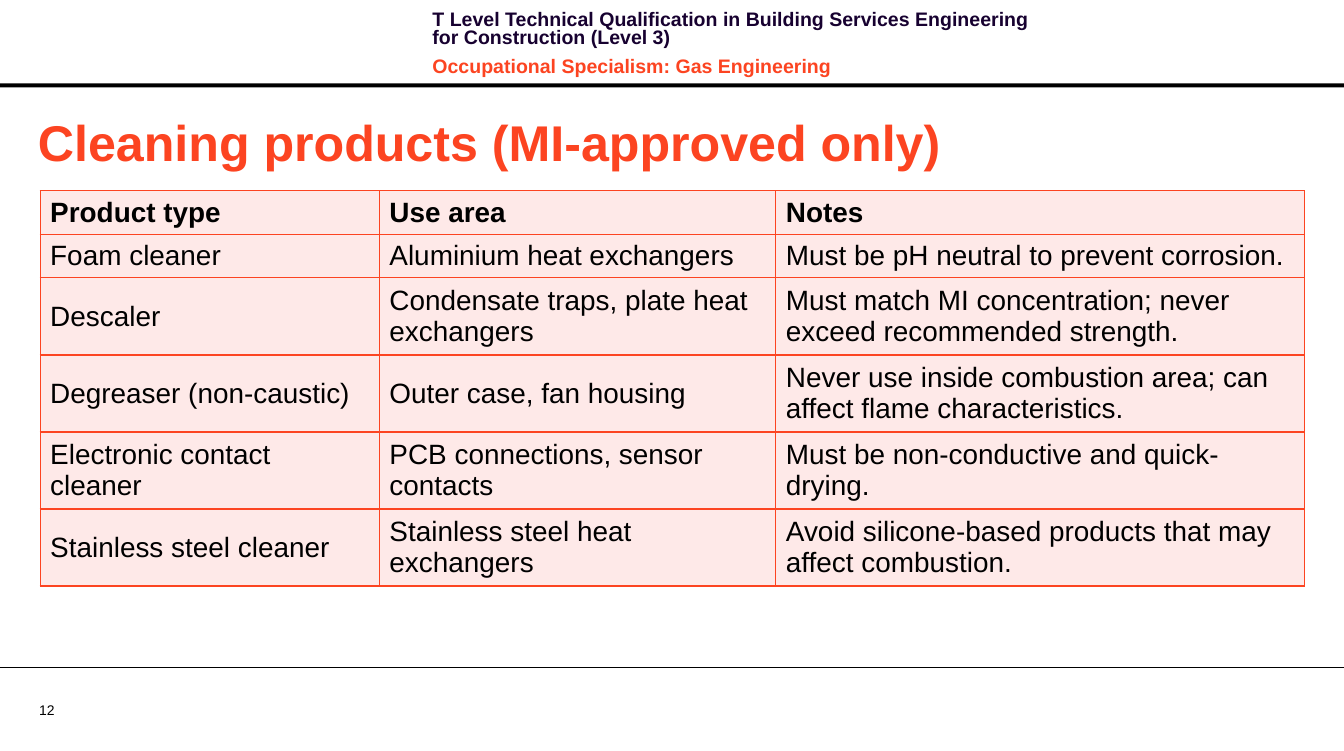
from lxml import etree
from pptx import Presentation
from pptx import util as u
from pptx.dml.color import RGBColor
from pptx.enum import shapes, text
from pptx.oxml import ns

WIDTH, HEIGHT = u.Inches(13.39), u.Inches(7.48)
FONT = "Arial"
COLOURS = {"black": "000000", "navy": "170130", "orange": "FC4421", "blush": "FEE9E8"}
COLUMN_SHARES = (25.24, 29.5, 39.36)
ONE_LINE, TWO_LINES = 5.48, 9.63
ROW_SHARES = (ONE_LINE,) * 2 + (TWO_LINES,) * 4
PRODUCTS = (
    ("Product type", "Use area", "Notes"),
    ("Foam cleaner", "Aluminium heat exchangers", "Must be pH neutral to prevent corrosion."),
    ("Descaler", "Condensate traps, plate heat exchangers",
     "Must match MI concentration; never exceed recommended strength."),
    ("Degreaser (non-caustic)", "Outer case, fan housing",
     "Never use inside combustion area; can affect flame characteristics."),
    ("Electronic contact cleaner", "PCB connections, sensor contacts",
     "Must be non-conductive and quick-drying."),
    ("Stainless steel cleaner", "Stainless steel heat exchangers",
     "Avoid silicone-based products that may affect combustion."),
)


def across(percent):
    return round(WIDTH * percent / 100)


def down(percent):
    return round(HEIGHT * percent / 100)


def area(left, top, width, height):
    return across(left), down(top), across(width), down(height)


def colour(name):
    return RGBColor.from_string(COLOURS[name])


def style(para, size, ink, bold=False):
    for span in para.runs:
        font = span.font
        font.name, font.size, font.bold = FONT, u.Pt(size), bold
        font.color.rgb = colour(ink)


def add_text(page, place, lines, size, inks, bold=False, anchor=text.MSO_ANCHOR.MIDDLE):
    frame = page.shapes.add_textbox(*place).text_frame
    frame.word_wrap = True
    frame.vertical_anchor = anchor
    frame.text = "\n".join(lines)
    for para, ink in zip(frame.paragraphs, inks):
        style(para, size, ink, bold)
    return frame


def add_header(page):
    lines = ("T Level Technical Qualification in Building Services Engineering "
             "for Construction (Level 3)", "Occupational Specialism: Gas Engineering")
    frame = add_text(page, area(31.44, 0.94, 47.57, 8.56), lines, 14,
                     ("navy", "orange"), True, text.MSO_ANCHOR.TOP)
    for para in frame.paragraphs:
        para.line_spacing = u.Pt(13.1)
        para.space_after = u.Pt(4)
    frame.paragraphs[1].space_before = u.Pt(4)


def add_bar(page):
    bar = page.shapes.add_shape(shapes.MSO_SHAPE.RECTANGLE, *area(0, 11.1, 100, 0.53))
    bar.shadow.inherit = False
    bar.fill.solid()
    bar.fill.fore_color.rgb = colour("black")
    bar.line.fill.background()


def add_rule(page, top):
    rule = page.shapes.add_connector(shapes.MSO_CONNECTOR.STRAIGHT, 0, down(top), WIDTH, down(top))
    rule.line.color.rgb = colour("black")
    rule.line.width = u.Pt(0.75)
    etree.SubElement(rule._element.spPr, ns.qn("a:effectLst"))


def add_borders(cell, ink):
    properties = cell._tc.get_or_add_tcPr()
    for index, side in enumerate(("lnL", "lnR", "lnT", "lnB")):
        border = etree.Element(ns.qn(f"a:{side}"), w=str(u.Pt(1)))
        fill = etree.SubElement(border, ns.qn("a:solidFill"))
        etree.SubElement(fill, ns.qn("a:srgbClr"), val=COLOURS[ink])
        properties.insert(index, border)


def add_product_table(page):
    place = area(2.99, 25.4, sum(COLUMN_SHARES), sum(ROW_SHARES))
    table = page.shapes.add_table(len(PRODUCTS), len(COLUMN_SHARES), *place).table
    table.horz_banding = False
    for column, share in zip(table.columns, COLUMN_SHARES):
        column.width = across(share)
    for number, (row, share, words) in enumerate(zip(table.rows, ROW_SHARES, PRODUCTS)):
        row.height = down(share)
        for cell, wording in zip(row.cells, words):
            cell.text = wording
            cell.vertical_anchor = text.MSO_ANCHOR.MIDDLE
            cell.fill.solid()
            cell.fill.fore_color.rgb = colour("blush")
            add_borders(cell, "orange")
            style(cell.text_frame.paragraphs[0], 20, "black", number == 0)


def add_page_number(page):
    frame = add_text(page, area(2.91, 93.45, 4.78, 2.27), ("12",), 10, ("black",))
    frame.margin_left = frame.margin_right = frame.margin_top = frame.margin_bottom = 0


def main():
    deck = Presentation()
    deck.slide_width, deck.slide_height = WIDTH, HEIGHT
    page = deck.slides.add_slide(deck.slide_layouts[6])
    add_bar(page)
    add_page_number(page)
    add_rule(page, 88.9)
    add_header(page)
    add_text(page, area(2.09, 14.04, 95, 9.49), ("Cleaning products (MI-approved only)",),
             36, ("orange",), True)
    add_product_table(page)
    deck.save("out.pptx")


if __name__ == "__main__":
    main()
